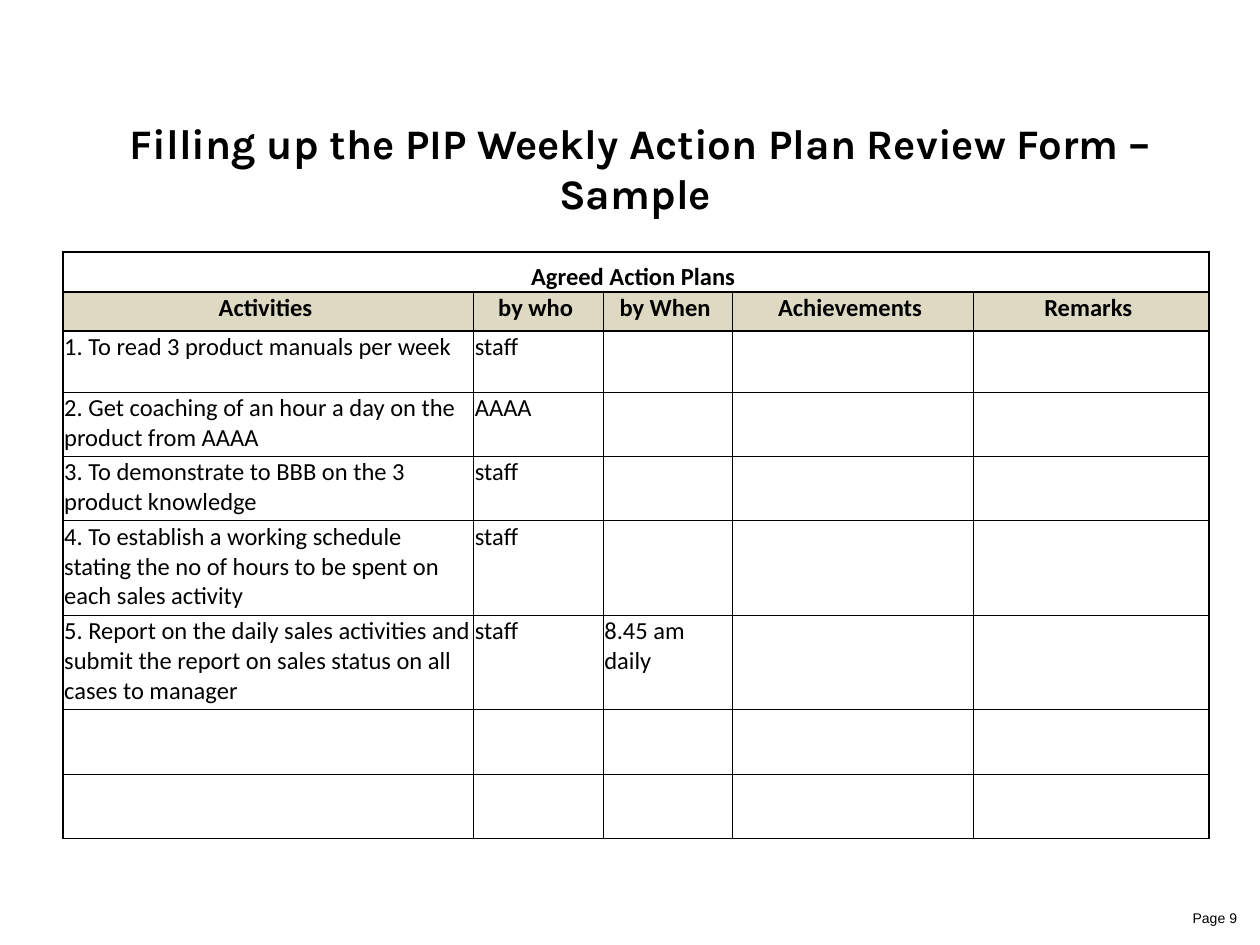
from pptx import Presentation
from pptx.util import Pt
from pptx.dml.color import RGBColor as Rgb
from pptx.enum.text import PP_ALIGN as Align, MSO_ANCHOR as Anchor
from pptx.oxml import parse_xml
from pptx.oxml.ns import nsdecls

COLS = [234.7, 74, 74, 137.5, 134.7]
ROWS = [23, 22.3, 34.7, 36.8, 36.8, 54, 54, 36.8, 36.8]
HEADS = ["Activities ", "by who ", "by When ", "Achievements ", "Remarks "]
PLANS = [
    ["1. To read 3 product manuals per week", "staff"],
    ["2. Get coaching of an hour a day on the product from AAAA", "AAAA"],
    ["3. To demonstrate to BBB on the 3 product knowledge", "staff"],
    ["4. To establish a working schedule stating the no of hours "
     "to be spent on each sales activity", "staff"],
    ["5. Report on the daily sales activities and submit the report "
     "on sales status on all cases to manager", "staff", "8.45 am daily"],
]


def color(code):
    return Rgb.from_string(code)


class Page:
    ink = "000000"
    shade = "DDD9C3"
    body = "Calibri"
    size = 14

    def __init__(self, slide):
        self.slide = slide

    def words(self, frame, text, face, size, bold, align):
        para = frame.paragraphs[0]
        para.text = text
        para.alignment = align
        font = para.font
        font.name, font.size, font.bold = face, Pt(size), bold
        font.color.rgb = color(self.ink)

    def label(self, box, text, face, size, bold, align, anchor):
        frame = self.slide.shapes.add_textbox(*map(Pt, box)).text_frame
        frame.word_wrap = True
        frame.vertical_anchor = anchor
        self.words(frame, text, face, size, bold, align)

    def edge(self, cell, side, width):
        cell._tc.get_or_add_tcPr().append(parse_xml(
            f'<a:ln{side} {nsdecls("a")} w="{Pt(width)}"><a:solidFill>'
            f'<a:srgbClr val="{self.ink}"/></a:solidFill></a:ln{side}>'))

    def cell(self, grid, row, col, text):
        cell = grid.cell(row, col)
        top = row == 0
        thick = {"L": top or col == 0, "R": top or col == len(COLS) - 1,
                 "T": row <= 2, "B": row <= 1}
        for side, wide in thick.items():
            self.edge(cell, side, 1 if wide else 0.5)
        if row == 1:
            cell.fill.solid()
            cell.fill.fore_color.rgb = color(self.shade)
        else:
            cell.fill.background()
        cell.margin_left = cell.margin_right = cell.margin_top = Pt(0.7)
        cell.margin_bottom = 0
        cell.vertical_anchor = Anchor.BOTTOM if top else Anchor.TOP
        head = row < 2
        self.words(cell.text_frame, text, self.body, self.size, head,
                   Align.CENTER if head else Align.LEFT)

    def table(self, left, top, data):
        shape = self.slide.shapes.add_table(
            len(ROWS), len(COLS), Pt(left), Pt(top),
            Pt(sum(COLS)), Pt(sum(ROWS)))
        grid = shape.table
        grid.first_row = grid.horz_banding = False
        for col, width in zip(grid.columns, COLS):
            col.width = Pt(width)
        for row, height in zip(grid.rows, ROWS):
            row.height = Pt(height)
        grid.cell(0, 0).merge(grid.cell(0, len(COLS) - 1))
        for row in range(len(ROWS)):
            texts = data[row] if row < len(data) else []
            for col in range(len(COLS)):
                text = texts[col] if col < len(texts) else ""
                self.cell(grid, row, col, text)


def main():
    deck = Presentation()
    deck.slide_width, deck.slide_height = Pt(720), Pt(540)
    page = Page(deck.slides.add_slide(deck.slide_layouts[6]))
    page.label((42, 60, 648, 72),
               "Filling up the PIP Weekly Action Plan Review Form – Sample ",
               "Karla", 24, True, Align.CENTER, Anchor.MIDDLE)
    page.table(36, 144, [["Agreed Action Plans "], HEADS, *PLANS])
    page.label((546, 516, 168, 37.5), "Page 9",
               "Arial", 8, False, Align.RIGHT, Anchor.TOP)
    deck.save("out.pptx")


if __name__ == "__main__":
    main()
